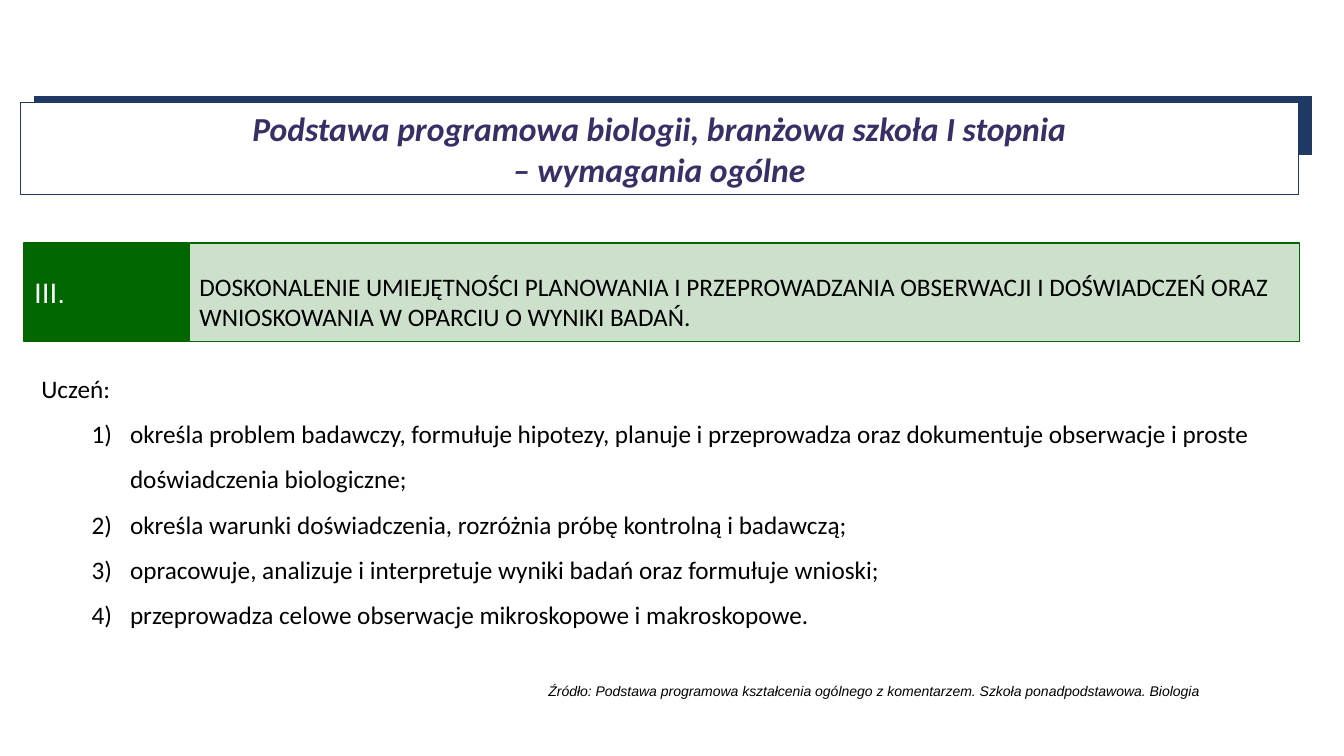
from dataclasses import dataclass

from lxml import etree
from pptx import Presentation
from pptx import util as u
from pptx.dml.color import RGBColor
from pptx.enum import shapes, text
from pptx.oxml import ns

HUES = {"white": "FFFFFF", "black": "000000", "green": "006600",
        "navy": "203864", "plum": "392E65"}
LEFT, MID = text.PP_ALIGN.LEFT, text.PP_ALIGN.CENTER


@dataclass
class Box:
    left: float
    top: float
    width: float
    height: float


@dataclass
class Panel:
    box: Box
    hue: str
    line: float
    alpha: int = 100


@dataclass
class Style:
    size: int
    hue: str = "black"
    face: str = "Calibri"
    bold: bool = False
    slant: bool = False
    align: text.PP_ALIGN = LEFT


SHADE = Panel(Box(0.34, 0.96, 12.67, 0.57), "navy", 0.75)
BADGE = Panel(Box(0.24, 2.41, 1.63, 0.98), "green", 1)
BAND = Panel(Box(1.88, 2.41, 11.01, 0.98), "green", 1, 20)
HEAD = ["Podstawa programowa biologii, branżowa szkoła I stopnia",
        "– wymagania ogólne"]
GOAL = ("DOSKONALENIE UMIEJĘTNOŚCI PLANOWANIA I PRZEPROWADZANIA OBSERWACJI "
        "I DOŚWIADCZEŃ ORAZ WNIOSKOWANIA W OPARCIU O WYNIKI BADAŃ.")
SKILLS = [
    "określa problem badawczy, formułuje hipotezy, planuje i przeprowadza "
    "oraz dokumentuje obserwacje i proste doświadczenia biologiczne;",
    "określa warunki doświadczenia, rozróżnia próbę kontrolną i badawczą;",
    "opracowuje, analizuje i interpretuje wyniki badań oraz formułuje wnioski;",
    "przeprowadza celowe obserwacje mikroskopowe i makroskopowe.",
]
SOURCE = ("Źródło: Podstawa programowa kształcenia ogólnego z komentarzem. "
          "Szkoła ponadpodstawowa. Biologia")


def tint(name: str) -> RGBColor:
    return RGBColor.from_string(HUES[name])


def place(shape, box: Box) -> None:
    shape.left, shape.top = u.Inches(box.left), u.Inches(box.top)
    shape.width, shape.height = u.Inches(box.width), u.Inches(box.height)


def paint(shape, fill: str, line: str, width: float) -> None:
    shape.fill.solid()
    shape.fill.fore_color.rgb = tint(fill)
    shape.line.color.rgb = tint(line)
    shape.line.width = u.Pt(width)


def draw(slide, panel: Panel):
    shape = slide.shapes.add_shape(shapes.MSO_SHAPE.RECTANGLE, 0, 0, 0, 0)
    place(shape, panel.box)
    shape.shadow.inherit = False
    paint(shape, panel.hue, panel.hue, panel.line)
    if panel.alpha < 100:
        color = shape.fill._xPr.find(".//" + ns.qn("a:srgbClr"))
        etree.SubElement(color, ns.qn("a:alpha"), val=str(panel.alpha * 1000))
    return shape


def write(shape, lines: list[str], style: Style,
          anchor: text.MSO_ANCHOR = text.MSO_ANCHOR.MIDDLE) -> None:
    frame = shape.text_frame
    frame.word_wrap = True
    frame.auto_size = text.MSO_AUTO_SIZE.NONE
    frame.vertical_anchor = anchor
    for spot, line in enumerate(lines):
        para = frame.add_paragraph() if spot else frame.paragraphs[0]
        para.alignment = style.align
        para.space_before = u.Pt(0)
        run = para.add_run()
        run.text = line
        font = run.font
        font.name, font.size = style.face, u.Pt(style.size)
        font.bold, font.italic = style.bold, style.slant
        font.color.rgb = tint(style.hue)


def label(slide, box: Box, line: str, style: Style,
          anchor: text.MSO_ANCHOR) -> None:
    shape = slide.shapes.add_textbox(0, 0, 0, 0)
    place(shape, box)
    write(shape, [line], style, anchor)


def indent(para, left: float, hang: float, mark: str, **kind: str) -> None:
    props = para._p.get_or_add_pPr()
    props.set("marL", str(u.Inches(left)))
    props.set("indent", str(u.Inches(hang)))
    etree.SubElement(props, ns.qn(mark), **kind)


def main() -> None:
    deck = Presentation()
    deck.slide_width, deck.slide_height = u.Inches(13.33), u.Inches(7.5)
    slide = deck.slides.add_slide(deck.slide_layouts[1])
    title, body = slide.placeholders

    shade = draw(slide, SHADE)
    title._element.addprevious(shade._element)
    place(title, Box(0.2, 1.02, 12.68, 0.91))
    paint(title, "white", "navy", 0.75)
    write(title, HEAD, Style(24, "plum", bold=True, slant=True, align=MID))

    badge = draw(slide, BADGE)
    write(badge, ["III."], Style(20, "white", "Arial"))
    draw(slide, BAND)
    label(slide, Box(1.88, 2.64, 10.89, 0.71), GOAL, Style(18),
          text.MSO_ANCHOR.TOP)

    place(body, Box(0.31, 3.69, 12.58, 2.57))
    write(body, ["Uczeń:", *SKILLS], Style(18))
    intro, *items = body.text_frame.paragraphs
    indent(intro, 0, 0, "a:buNone")
    for item in items:
        item.level = 1
        item.line_spacing = 1.5
        indent(item, 0.88, -0.38, "a:buAutoNum", type="arabicParenR")

    label(slide, Box(5.34, 6.65, 6.75, 0.41), SOURCE,
          Style(10, face="Arial", slant=True), text.MSO_ANCHOR.MIDDLE)
    deck.save("out.pptx")


if __name__ == "__main__":
    main()
